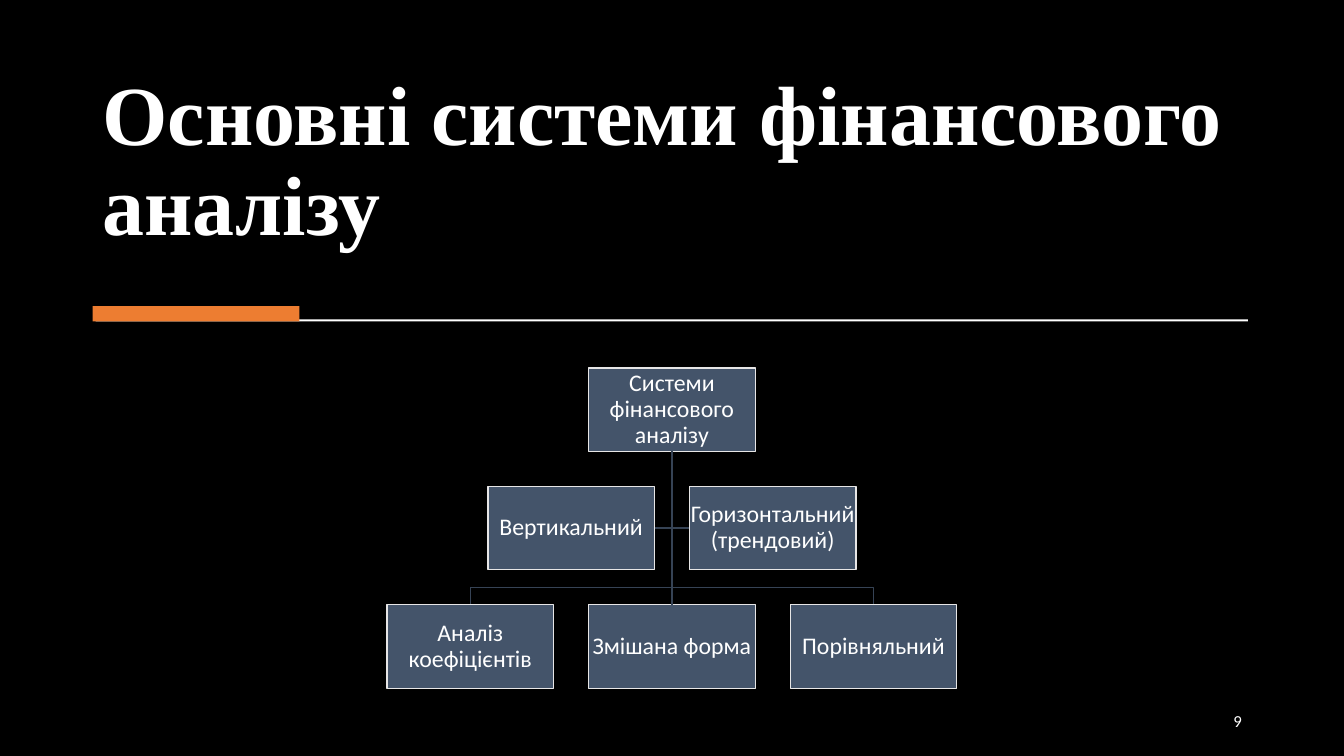
from dataclasses import dataclass

from lxml.etree import SubElement
from pptx import Presentation
from pptx.dml.color import RGBColor
from pptx.enum.shapes import MSO_CONNECTOR, MSO_SHAPE
from pptx.enum.text import MSO_ANCHOR as ANCHOR, PP_ALIGN as ALIGN
from pptx.oxml.ns import qn
from pptx.util import Pt

COLORS = {
    "back": "000000",
    "text": "FFFFFF",
    "accent": "ED7D31",
    "box": "44546A",
    "border": "E7E6E6",
    "link": "364355",
}
CENTER = 480
BOX_W, BOX_H = 119, 59.6
TOP, ROW_STEP, COL_STEP = 262.8, 84.6, 144
INSET = 0.8


@dataclass(frozen=True)
class Node:
    """A chart box; col counts column steps from the slide's centre."""
    text: str
    row: int
    col: float

    @property
    def x(self) -> float:
        return CENTER + self.col * COL_STEP

    @property
    def top(self) -> float:
        return TOP + self.row * ROW_STEP


ROOT = Node("Системи фінансового аналізу", 0, 0)
SIDES = [Node("Вертикальний", 1, -0.5), Node("Горизонтальний (трендовий)", 1, 0.5)]
MIXED = Node("Змішана форма", 2, 0)
ENDS = [Node("Аналіз коефіцієнтів", 2, -1), Node("Порівняльний", 2, 1)]


def rgb(name: str) -> RGBColor:
    return RGBColor.from_string(COLORS[name])


def write(s, text: str, *, size: float, font: str = "Calibri", bold: bool = False,
          align=ALIGN.LEFT, anchor=ANCHOR.MIDDLE, spacing: float = 1.0,
          inset: float | None = None) -> None:
    tf = s.text_frame
    tf.word_wrap = True
    tf.vertical_anchor = anchor
    if inset is not None:
        tf.margin_left = tf.margin_right = tf.margin_top = tf.margin_bottom = Pt(inset)
    p = tf.paragraphs[0]
    p.alignment, p.line_spacing = align, spacing
    r = p.add_run()
    r.text = text
    r.font.name, r.font.size, r.font.bold = font, Pt(size), bold
    r.font.color.rgb = rgb("text")


def add_text(shapes, x: float, y: float, w: float, h: float, text: str, **fmt) -> None:
    write(shapes.add_textbox(Pt(x), Pt(y), Pt(w), Pt(h)), text, **fmt)


def add_rect(shapes, x: float, y: float, w: float, h: float, fill: str,
             border: str | None = None):
    s = shapes.add_shape(MSO_SHAPE.RECTANGLE, Pt(x), Pt(y), Pt(w), Pt(h))
    s.shadow.inherit = False
    s.fill.solid()
    s.fill.fore_color.rgb = rgb(fill)
    if border:
        s.line.color.rgb = rgb(border)
        s.line.width = Pt(1)
    else:
        s.line.fill.background()
    return s


def add_node(shapes, node: Node):
    s = add_rect(shapes, node.x - BOX_W / 2, node.top, BOX_W, BOX_H, "box", "border")
    write(s, node.text, size=17, align=ALIGN.CENTER, spacing=0.9, inset=INSET)
    return s


def add_elbow(shapes, *points: tuple[float, float]) -> None:
    """Draw an open bent line from the root box through the points."""
    start, *rest = [(Pt(x), Pt(y)) for x, y in points]
    fb = shapes.build_freeform(*start)
    fb.add_line_segments(rest, close=False)
    s = fb.convert_to_shape()
    s.shadow.inherit = False
    s.fill.background()
    s.line.color.rgb = rgb("link")
    s.line.width = Pt(1)


def add_trunk(shapes, parent, child) -> None:
    c = shapes.add_connector(MSO_CONNECTOR.STRAIGHT, 0, 0, 0, 0)
    c.begin_connect(parent, 2)
    c.end_connect(child, 0)
    c.line.color.rgb = rgb("link")
    c.line.width = Pt(1)
    SubElement(c._element.spPr, qn("a:effectLst"))


def add_chart_tree(shapes) -> None:
    stem = (CENTER, ROOT.top + BOX_H)
    for node in SIDES:
        edge = node.x + (BOX_W / 2 if node.x < CENTER else -BOX_W / 2)
        mid = node.top + BOX_H / 2
        add_elbow(shapes, stem, (CENTER, mid), (edge, mid))
    bus = MIXED.top - (ROW_STEP - BOX_H) / 2
    for node in ENDS:
        add_elbow(shapes, stem, (CENTER, bus), (node.x, bus), (node.x, node.top))
    add_trunk(shapes, add_node(shapes, ROOT), add_node(shapes, MIXED))
    for node in ENDS + SIDES:
        add_node(shapes, node)


def main() -> None:
    prs = Presentation()
    prs.slide_width, prs.slide_height = Pt(960), Pt(540)
    slide = prs.slides.add_slide(prs.slide_layouts[6])
    slide.background.fill.solid()
    slide.background.fill.fore_color.rgb = rgb("back")
    shapes = slide.shapes
    add_text(shapes, 66.2, 33.8, 827.3, 151.2, "Основні системи фінансового аналізу",
             size=60, font="Times New Roman", bold=True, anchor=ANCHOR.BOTTOM, spacing=0.9)
    add_rect(shapes, 68.4, 228.2, 823, 1.4, "text")
    add_rect(shapes, 66.2, 218.7, 147.6, 10.8, "accent")
    add_chart_tree(shapes)
    add_text(shapes, 678.2, 500.4, 216, 28.8, "9", size=12, align=ALIGN.RIGHT)
    prs.save("out.pptx")


if __name__ == "__main__":
    main()
